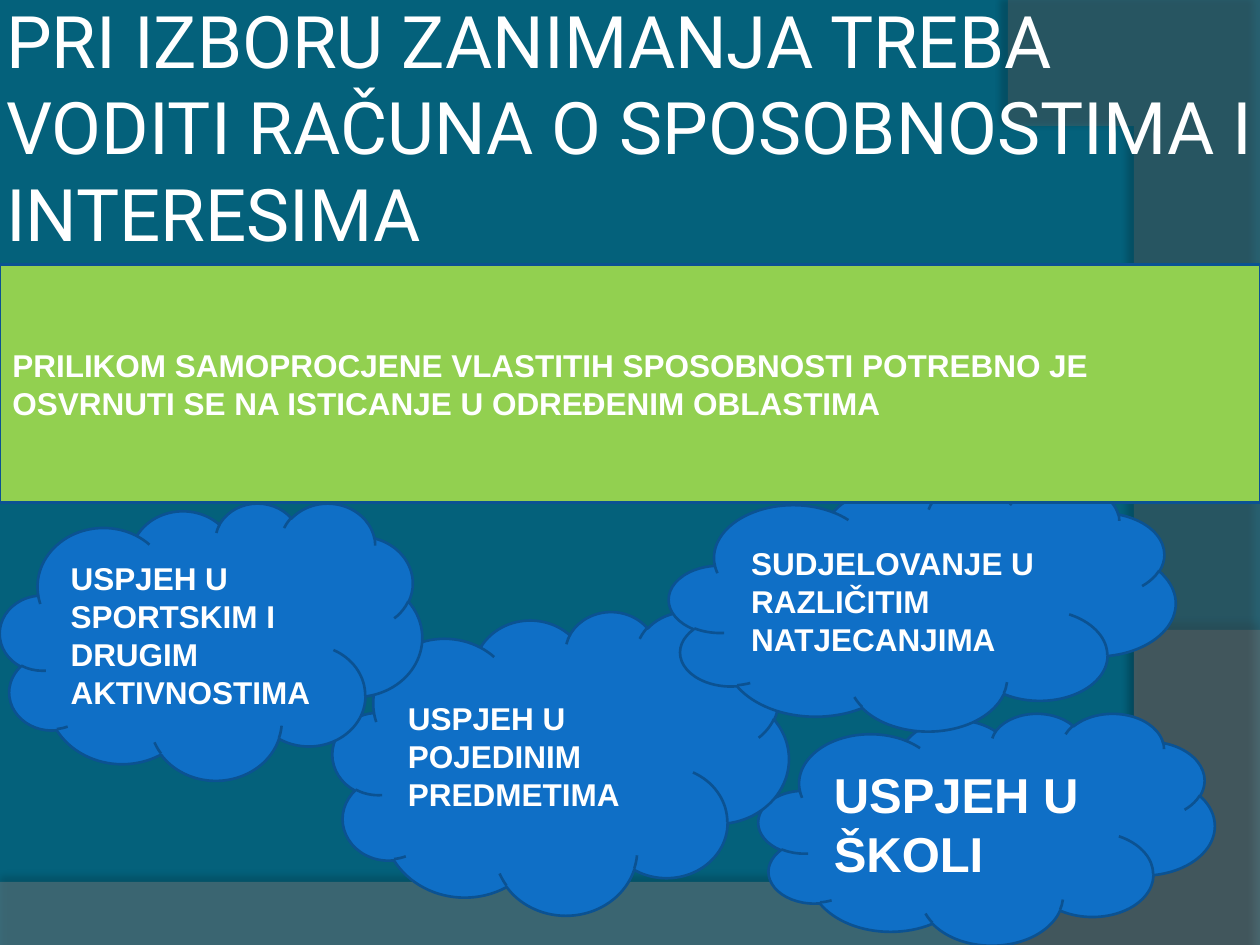
from dataclasses import dataclass

from lxml.etree import SubElement
from pptx import Presentation
from pptx.dml.color import RGBColor
from pptx.enum.shapes import MSO_SHAPE as Preset
from pptx.enum.text import MSO_ANCHOR as Anchor, MSO_AUTO_SIZE as AutoSize, PP_ALIGN as Align
from pptx.oxml.ns import qn
from pptx.util import Inches, Pt

Point = tuple[float, float]
CURVE_STEPS = 40


@dataclass
class Panel:
    text: str
    left: float
    top: float
    width: float
    height: float
    size: float = 18
    preset: Preset = Preset.CLOUD
    fill: str = "0F6FC6"


@dataclass
class Swoosh:
    """A background outline: straight corners, then one Bezier curve, then closing corners."""
    corners: list[Point]
    controls: list[Point]
    closing: list[Point]
    fill: str
    opacity: int
    shadow_opacity: int
    shadow_distance: float
    shadow_angle: int


PANELS = [
    Panel("USPJEH U ŠKOLI", 6.02, 5.66, 3.62, 1.84, size=28),
    Panel("USPJEH U POJEDINIM PREDMETIMA", 2.64, 4.85, 3.62, 2.41),
    Panel("USPJEH U SPORTSKIM I DRUGIM AKTIVNOSTIMA", 0, 3.99, 3.35, 2.2),
    Panel("SUDJELOVANJE U RAZLIČITIM NATJECANJIMA", 5.31, 3.83, 4.02, 1.97),
    Panel("PRILIKOM SAMOPROCJENE VLASTITIH SPOSOBNOSTI POTREBNO JE "
          "OSVRNUTI SE NA ISTICANJE U ODREĐENIM OBLASTIMA",
          0, 2.1, 10, 1.89, preset=Preset.RECTANGLE, fill="92D050"),
]
SWOOSHES = [
    Swoosh([(0, 7.05), (0, 7.51), (10, 7.51), (10, 5.2)],
           [(5.59, 7.29), (3.91, 7.19), (0, 7.05)], [], "7F7F7F", 45, 35, 3.5, 270),
    Swoosh([(10, 0.02), (10, 7.5), (8.21, 7.5)],
           [(9.35, 6.19), (10.18, 3), (8, 0)], [(10, 0.02)], "5E5E5E", 40, 45, 4, 180),
]


def color(value: str) -> RGBColor:
    return RGBColor.from_string(value)


def set_solid(fill, value: str) -> None:
    fill.solid()
    fill.fore_color.rgb = color(value)


def add_alpha(color_element, percent: int) -> None:
    SubElement(color_element, qn("a:alpha"), val=str(percent * 1000))


def write_text(frame, text: str, size: float, font: str, bold: bool) -> None:
    frame.word_wrap = True
    frame.vertical_anchor = Anchor.MIDDLE
    para = frame.paragraphs[0]
    para.alignment = Align.LEFT
    span = para.add_run()
    span.text = text
    span.font.name = font
    span.font.size = Pt(size)
    span.font.bold = bold
    span.font.color.rgb = color("FFFFFF")


def curve_points(start: Point, controls: list[Point]) -> list[Point]:
    """Points along a cubic Bezier curve, without its start."""
    points = []
    for step in range(1, CURVE_STEPS + 1):
        t = step / CURVE_STEPS
        weights = ((1 - t) ** 3, 3 * t * (1 - t) ** 2, 3 * t * t * (1 - t), t ** 3)
        knots = (start, *controls)
        points.append(tuple(sum(w * knot[axis] for w, knot in zip(weights, knots))
                            for axis in (0, 1)))
    return points


def add_swoosh(page, swoosh: Swoosh, depth: int) -> None:
    first, *rest = swoosh.corners
    outline = rest + curve_points(rest[-1], swoosh.controls) + swoosh.closing
    builder = page.shapes.build_freeform(*first, scale=Inches(1))
    builder.add_line_segments(outline, close=True)
    shape = builder.convert_to_shape()
    set_solid(shape.fill, swoosh.fill)
    shape.line.fill.background()
    properties = shape.element.spPr
    add_alpha(properties.find(qn("a:solidFill"))[0], swoosh.opacity)
    shape.shadow.inherit = False
    shadow = SubElement(properties.find(qn("a:effectLst")), qn("a:outerShdw"),
                        blurRad=str(Pt(4)), dist=str(Pt(swoosh.shadow_distance)),
                        dir=str(swoosh.shadow_angle * 60000), algn="ctr", rotWithShape="0")
    add_alpha(SubElement(shadow, qn("a:srgbClr"), val="000000"), swoosh.shadow_opacity)
    # The first two children of the tree are its own properties.
    page.shapes.element.insert(2 + depth, shape.element)


def add_panel(page, panel: Panel) -> None:
    bounds = map(Inches, (panel.left, panel.top, panel.width, panel.height))
    shape = page.shapes.add_shape(panel.preset, *bounds)
    shape.shadow.inherit = False
    set_solid(shape.fill, panel.fill)
    shape.line.color.rgb = color("0B5292")
    shape.line.width = Pt(1.5)
    write_text(shape.text_frame, panel.text, panel.size, "Arial", True)


def format_title(title) -> None:
    title.left, title.top, title.width, title.height = map(Inches, (0, 0.3, 10, 1.4))
    frame = title.text_frame
    frame.auto_size = AutoSize.NONE
    frame.margin_left = frame.margin_right = Inches(0.05)
    frame.margin_top = frame.margin_bottom = Inches(0.05)
    write_text(frame, "PRI IZBORU ZANIMANJA TREBA VODITI RAČUNA O SPOSOBNOSTIMA I INTERESIMA",
               41.4, "Roboto", False)


def main() -> None:
    deck = Presentation()
    deck.slide_width, deck.slide_height = Inches(10), Inches(7.5)
    page = deck.slides.add_slide(deck.slide_layouts[5])
    set_solid(page.background.fill, "04617B")
    format_title(page.shapes.title)
    for depth, swoosh in enumerate(SWOOSHES):
        add_swoosh(page, swoosh, depth)
    for panel in PANELS:
        add_panel(page, panel)
    deck.save("out.pptx")


if __name__ == "__main__":
    main()
